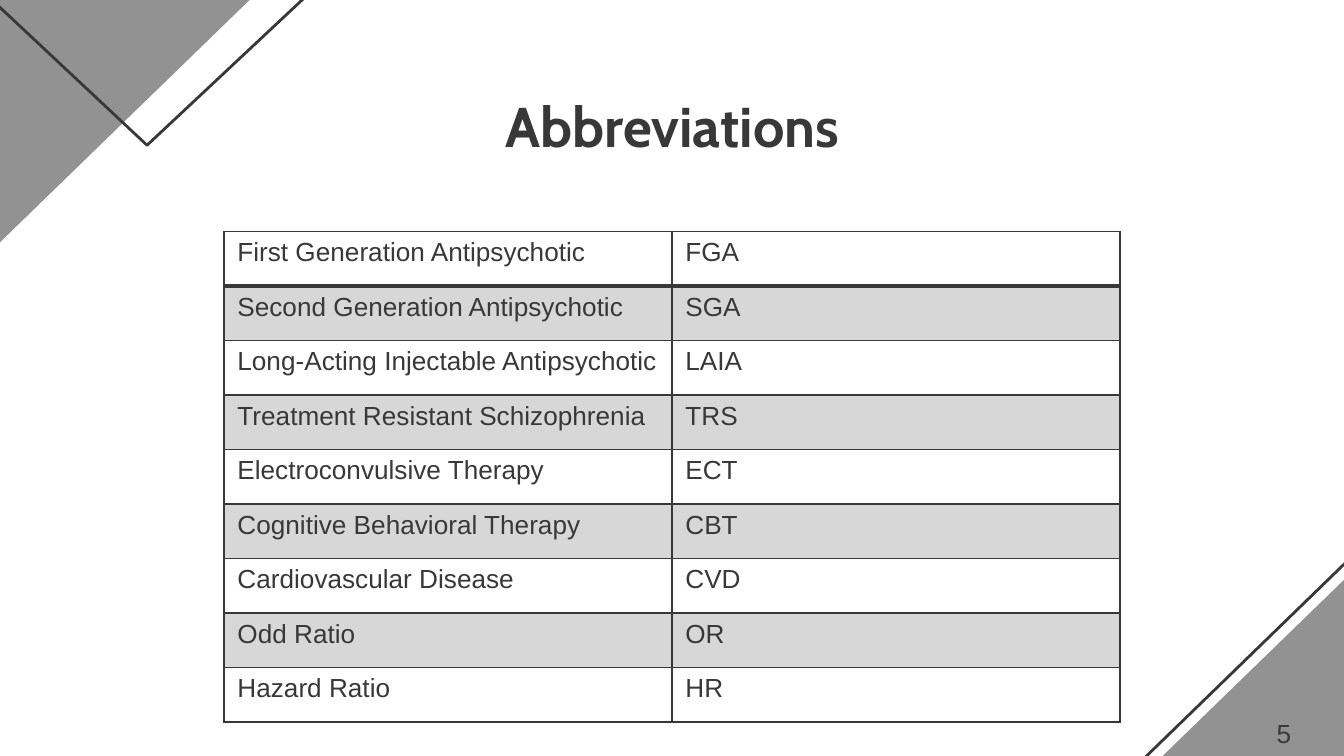
from lxml import etree
from pptx import Presentation
from pptx.dml.color import RGBColor
from pptx.enum import shapes, text
from pptx.oxml import ns
from pptx.util import Pt

INK, GREY = "383838", "929292"
ABBREVIATIONS = [
    ("First Generation Antipsychotic", "FGA"),
    ("Second Generation Antipsychotic", "SGA"),
    ("Long-Acting Injectable Antipsychotic", "LAIA"),
    ("Treatment Resistant Schizophrenia", "TRS"),
    ("Electroconvulsive Therapy", "ECT"),
    ("Cognitive Behavioral Therapy", "CBT"),
    ("Cardiovascular Disease", "CVD"),
    ("Odd Ratio", "OR"),
    ("Hazard Ratio", "HR"),
]


def paint(color, value):
    color.rgb = RGBColor.from_string(value)


def style_text(frame, size, font="Arial", bold=False):
    for para in frame.paragraphs:
        for span in para.runs:
            span.font.size = Pt(size)
            span.font.name = font
            span.font.bold = bold
            paint(span.font.color, INK)


def add_triangle(page, kind, box, fill=None, rotation=0):
    """Place a mirrored triangle: filled if a fill is given, else outlined."""
    shape = page.shapes.add_shape(kind, *map(Pt, box))
    shape.shadow.inherit = False
    shape.rotation = rotation
    shape._element.spPr.get_or_add_xfrm().set("flipH", "1")
    if fill:
        shape.fill.solid()
        paint(shape.fill.fore_color, fill)
        shape.line.fill.background()
    else:
        shape.fill.background()
        paint(shape.line.color, INK)
        shape.line.width = Pt(1.5)


def add_corners(page, width, height):
    right, isosceles = shapes.MSO_SHAPE.RIGHT_TRIANGLE, shapes.MSO_SHAPE.ISOSCELES_TRIANGLE
    side, rise = 267.8, 260
    top = height - 200.5
    add_triangle(page, right, (width - 167, top, side, rise))
    add_triangle(page, right, (width - 158.4, top, side, rise), GREY)
    add_triangle(page, right, (-60, -72, side, rise), GREY, 180)
    add_triangle(page, isosceles, (-132.5, -120.2, 422.6, 198), rotation=180)


def add_label(page, box, words, size, **font):
    frame = page.shapes.add_textbox(*map(Pt, box)).text_frame
    frame.word_wrap = True
    frame.text = words
    style_text(frame, size, **font)
    return frame


def add_title(page, box, words):
    frame = add_label(page, box, words, 30, font="Cabin", bold=True)
    frame.margin_top = frame.margin_bottom = Pt(7.2)
    frame.paragraphs[0].alignment = text.PP_ALIGN.CENTER


def set_borders(cell, **widths):
    props = cell._tc.get_or_add_tcPr()
    for edge in "LRTB":
        line = etree.SubElement(props, ns.qn("a:ln" + edge), w=str(Pt(widths.get(edge, 1))))
        fill = etree.SubElement(line, ns.qn("a:solidFill"))
        etree.SubElement(fill, ns.qn("a:srgbClr"), val=INK)


def tint(cell, percent):
    cell.fill.solid()
    paint(cell.fill.fore_color, INK)
    color = cell._tc.tcPr.find(".//" + ns.qn("a:srgbClr") + "/..")
    color = cell._tc.tcPr.find(ns.qn("a:solidFill") + "/" + ns.qn("a:srgbClr"))
    etree.SubElement(color, ns.qn("a:alpha"), val=str(percent * 1000))


def add_abbreviations(page, box, entries):
    """Fill the box with ruled rows, every second one tinted."""
    left, top, width, height = map(Pt, box)
    table = page.shapes.add_table(len(entries), 2, left, top, width, height).table
    table.first_row = table.horz_banding = False
    for row, entry in enumerate(entries):
        for column, words in enumerate(entry):
            cell = table.cell(row, column)
            cell.text = words
            style_text(cell.text_frame, 14)
            set_borders(cell, T=2 if row == 1 else 1, B=2 if row == 0 else 1)
            if row % 2:
                tint(cell, 20)
            else:
                cell.fill.background()


def main():
    width, height = 720, 405
    deck = Presentation()
    deck.slide_width, deck.slide_height = Pt(width), Pt(height)
    page = deck.slides.add_slide(deck.slide_layouts[6])
    add_corners(page, width, height)
    add_title(page, (70.4, 41.8, 579.6, 41.8), "Abbreviations")
    add_abbreviations(page, (120, 124, 480, 262.8), ABBREVIATIONS)
    add_label(page, (676.8, 380.9, 28, 24.5), "5", 14)
    deck.save("out.pptx")


if __name__ == "__main__":
    main()
